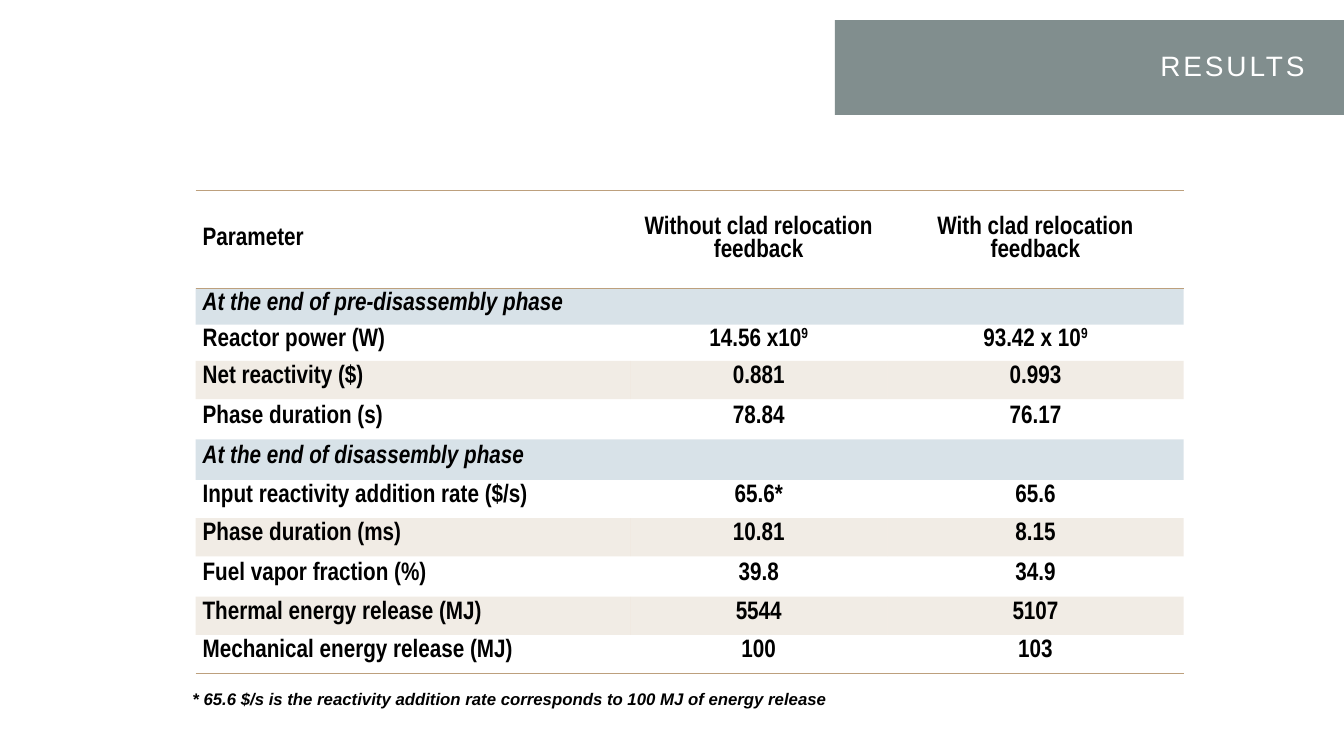
from lxml.etree import SubElement
from pptx import Presentation
from pptx.dml.color import RGBColor
from pptx.enum.shapes import MSO_SHAPE
from pptx.enum.text import MSO_ANCHOR, MSO_AUTO_SIZE, PP_ALIGN
from pptx.oxml import parse_xml
from pptx.oxml.ns import nsdecls, qn
from pptx.util import Inches, Pt

COLORS = {
    "banner": "627272",
    "section": "3E7090",
    "tan": "BDA07D",
    "text": "000000",
    "white": "FFFFFF",
}
NO_STYLE = "{2D5ABB26-0587-4C30-8999-92F81FD0307C}"

HEADINGS = ("Parameter", "Without clad relocation feedback", "With clad relocation feedback")
# Phase title, then its rows; ^ starts a superscript
PHASES = [
    ("At the end of pre-disassembly phase", [
        ("Reactor power (W)", "14.56 x10^9", "93.42 x 10^9"),
        ("Net reactivity ($)", "0.881", "0.993"),
        ("Phase duration (s)", "78.84", "76.17"),
    ]),
    ("At the end of disassembly phase", [
        ("Input reactivity addition rate ($/s)", "65.6*", "65.6"),
        ("Phase duration (ms)", "10.81", "8.15"),
        ("Fuel vapor fraction (%)", "39.8", "34.9"),
        ("Thermal energy release (MJ)", "5544", "5107"),
        ("Mechanical energy release (MJ)", "100", "103"),
    ]),
]
COLUMN_WIDTHS = (4.31, 2.55, 2.94)
ROW_HEIGHTS = (0.97, 0.36, 0.36, 0.38, 0.4, 0.4, 0.38, 0.38, 0.4, 0.38, 0.38)


def format_run(run, size, font, color, bold=False, italic=False):
    run.font.size = Pt(size)
    run.font.name = font
    run.font.bold = bold
    run.font.italic = italic
    run.font.color.rgb = RGBColor.from_string(COLORS[color])


def fill_tint(fill, color, percent):
    fill.solid()
    fill.fore_color.rgb = RGBColor.from_string(COLORS[color])
    srgb = fill._xPr.find(qn("a:solidFill")).find(qn("a:srgbClr"))
    SubElement(srgb, qn("a:alpha"), val=str(percent * 1000))


def add_rules(cell, sides):
    """Draw thin tan lines on the given cell sides, T before B."""
    for position, side in enumerate(sides):
        rule = parse_xml(
            f'<a:ln{side} {nsdecls("a")} w="12700"><a:solidFill>'
            f'<a:srgbClr val="{COLORS["tan"]}"/></a:solidFill></a:ln{side}>')
        cell._tc.get_or_add_tcPr().insert(position, rule)


def write_cell(cell, content, column, italic=False, spacing=Pt(13)):
    cell.margin_left = cell.margin_right = Inches(0.07)
    cell.margin_top = cell.margin_bottom = 0
    cell.vertical_anchor = MSO_ANCHOR.MIDDLE
    base, _, exponent = content.partition("^")
    paragraph = cell.text_frame.paragraphs[0]
    paragraph.text = base
    paragraph.alignment = PP_ALIGN.CENTER if column else PP_ALIGN.JUSTIFY
    paragraph.space_after = Pt(12)
    paragraph.line_spacing = spacing
    if exponent:
        paragraph.add_run().text = exponent
    for run in paragraph.runs:
        format_run(run, 18, "Arial Narrow", "text", bold=True, italic=italic)
    if exponent:
        paragraph.runs[1].font._element.set("baseline", "30000")


def add_banner(slide, left, top, width, height):
    banner = slide.shapes.add_shape(
        MSO_SHAPE.RECTANGLE, Inches(left), Inches(top), Inches(width), Inches(height))
    banner.shadow.inherit = False
    banner.line.fill.background()
    fill_tint(banner.fill, "banner", 80)
    frame = banner.text_frame
    frame.word_wrap = True
    frame.margin_left, frame.margin_right = Inches(0.31), Inches(0.39)
    frame.margin_top = frame.margin_bottom = 0
    frame.vertical_anchor = MSO_ANCHOR.MIDDLE
    frame.text = "RESULTS"
    title = frame.paragraphs[0]
    title.alignment = PP_ALIGN.RIGHT
    title.line_spacing = 0.9
    title.space_before = Pt(10)
    format_run(title.runs[0], 20, "Arial", "white")
    title.runs[0].font._element.set("spc", "200")


def add_results_table(slide, left, top, width, height):
    results = slide.shapes.add_table(
        len(ROW_HEIGHTS), len(COLUMN_WIDTHS),
        Inches(left), Inches(top), Inches(width), Inches(height)).table
    results.first_row = results.horz_banding = False
    results._tbl.tblPr.find(qn("a:tableStyleId")).text = NO_STYLE
    for column, column_width in zip(results.columns, COLUMN_WIDTHS):
        column.width = Inches(column_width)
    for row, row_height in zip(results.rows, ROW_HEIGHTS):
        row.height = Inches(row_height)

    # Heading row
    for column, heading in enumerate(HEADINGS):
        cell = results.cell(0, column)
        write_cell(cell, heading, column, spacing=1.0)
        cell.fill.background()
        add_rules(cell, "TB")

    # Phases: a merged title row, then rows with every second one tinted
    row = 1
    for phase, measures in PHASES:
        title = results.cell(row, 0)
        title.merge(results.cell(row, len(HEADINGS) - 1))
        write_cell(title, phase, 0, italic=True)
        fill_tint(title.fill, "section", 20)
        for index, measure in enumerate(measures):
            row += 1
            for column, content in enumerate(measure):
                cell = results.cell(row, column)
                write_cell(cell, content, column)
                if index % 2:
                    fill_tint(cell.fill, "tan", 20)
                else:
                    cell.fill.background()
        row += 1

    # Closing rule
    for cell in results.rows[len(ROW_HEIGHTS) - 1].cells:
        add_rules(cell, "B")


def add_footnote(slide, left, top, width, height):
    footnote = slide.shapes.add_textbox(
        Inches(left), Inches(top), Inches(width), Inches(height))
    frame = footnote.text_frame
    frame.word_wrap = False
    frame.auto_size = MSO_AUTO_SIZE.SHAPE_TO_FIT_TEXT
    frame.text = "* 65.6 $/s is the reactivity addition rate corresponds to 100 MJ of energy release"
    format_run(frame.paragraphs[0].runs[0], 12, "Arial", "text", bold=True, italic=True)


def main():
    deck = Presentation()
    deck.slide_width, deck.slide_height = Inches(13.33), Inches(7.5)
    slide = deck.slides.add_slide(deck.slide_layouts[6])
    add_banner(slide, 8.28, 0.2, 5.05, 0.94)
    add_results_table(slide, 1.94, 1.89, sum(COLUMN_WIDTHS), sum(ROW_HEIGHTS))
    add_footnote(slide, 1.81, 6.78, 6.56, 0.3)
    deck.save("out.pptx")


if __name__ == "__main__":
    main()
